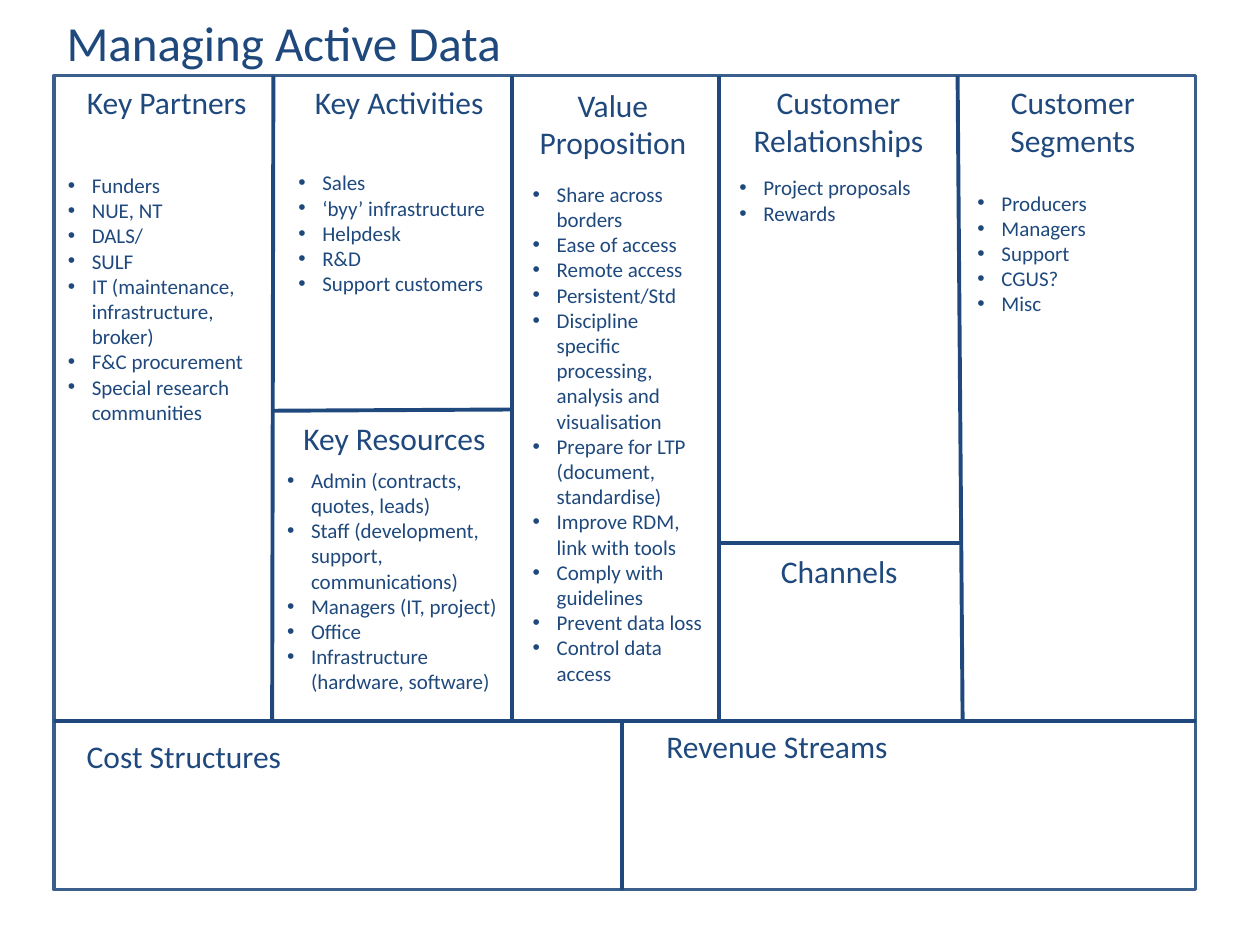
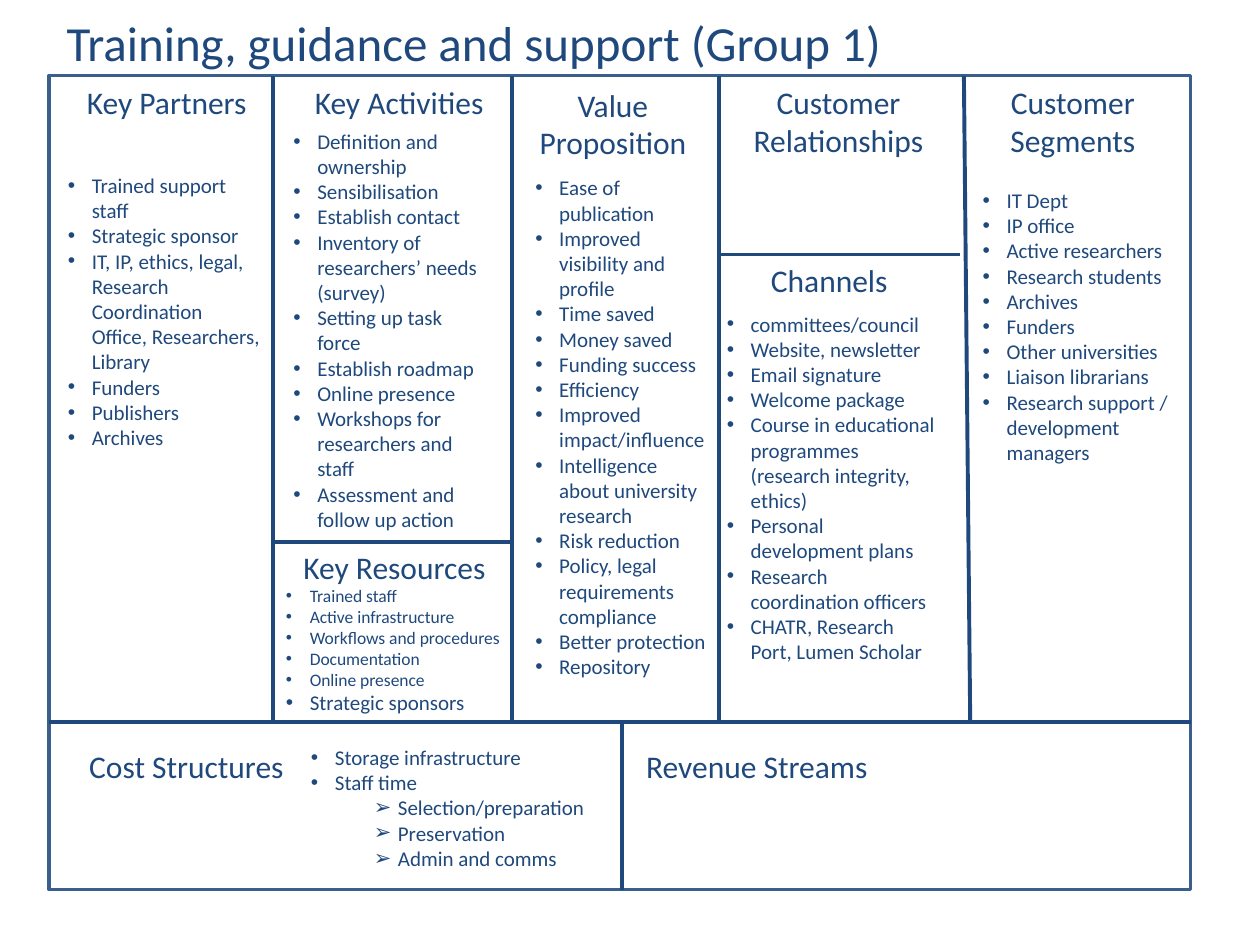
from collections import namedtuple

from lxml import etree
from pptx import Presentation
from pptx import util as u
from pptx.dml.color import RGBColor
from pptx.enum import shapes, text
from pptx.oxml.ns import qn

NAVY = RGBColor(0x1F, 0x49, 0x7D)
STEEL = RGBColor(0x3A, 0x5F, 0x8C)
FONT = "Calibri"

# The slide is a grid of 100 columns by 75 rows; all lengths count its cells.
COLS, ROWS = 100, 75
WIDTH, HEIGHT = u.Inches(10), u.Inches(7.5)

EDGES = (4.3, 21.7, 40.6, 57.1, 76.2)
TOP, FLOOR, BASE = 6, 57.2, 70.6
MIDDLE = 49.4
FRAME_WIDTH = 90.6

Box = namedtuple("Box", "x y w h")
Item = namedtuple("Item", "label level size", defaults=(0, 12))
Head = namedtuple("Head", "label dx dy w wrap", defaults=(False,))
Notes = namedtuple("Notes", "dx dy w items")
Canvas = namedtuple("Canvas", "title left floor tilts splits nudges notes")

HEADS = {
    "partners": Head("Key Partners", 1.6, 0.1, 14.8),
    "activities": Head("Key Activities", 2.3, 0.1, 15.6),
    "resources": Head("Key Resources", 1.4, 0, 16.6),
    "value": Head("Value Proposition", 0.4, 0.3, 15.3, True),
    "relations": Head("Customer Relationships", 0.8, 0.1, 17.3, True),
    "channels": Head("Channels", 3.1, 0, 11.4),
    "segments": Head("Customer Segments", 0.4, 0.1, 17.1, True),
    "costs": Head("Cost Structures", 1.6, 0.8, 17.6),
    "revenue": Head("Revenue Streams", 2.5, 0, 19.8),
}

ACTIVE = Canvas(
    "Managing Active Data", left=4.3, floor=57.2,
    tilts=((21.7, 21.6), (40.6, 40.6), (57.1, 57.1), (76, 76.4)),
    splits={"resources": (21.6, 32.6, 40.5, 32.5),
            "channels": (57.1, 43.1, 76.4, 43.1)},
    nudges={"resources": (0, 0.2), "channels": (0.8, 0.2)},
    notes={
        "partners": Notes(0.1, 7.2, 17.3, [
            "Funders", "NUE, NT", "DALS/", "SULF",
            "IT (maintenance, infrastructure, broker)",
            "F&C procurement", "Special research communities"]),
        "activities": Notes(1, 7, 17.3, [
            "Sales", "‘byy’ infrastructure", "Helpdesk", "R&D",
            "Support customers"]),
        "resources": Notes(0.1, 4, 19.1, [
            "Admin (contracts, quotes, leads)",
            "Staff (development, support, communications)",
            "Managers (IT, project)", "Office",
            "Infrastructure (hardware, software)"]),
        "value": Notes(0.7, 7.9, 15.7, [
            "Share across borders", "Ease of access", "Remote access",
            "Persistent/Std",
            "Discipline specific processing, analysis and visualisation",
            "Prepare for LTP (document, standardise)",
            "Improve RDM, link with tools", "Comply with guidelines",
            "Prevent data loss", "Control data access"]),
        "relations": Notes(0.6, 7.4, 17.3, ["Project proposals", "Rewards"]),
        "segments": Notes(0.4, 8.6, 17.3, [
            "Producers", "Managers", "Support", "CGUS?", "Misc"]),
    })

TRAINING = Canvas(
    "Training, guidance and support (Group 1)", left=3.9, floor=57.3,
    tilts=((21.7, 21.7), (40.6, 40.6), (57.1, 57.1), (76.5, 77)),
    splits={"resources": (21.7, 43, 40.7, 43),
            "channels": (56.9, 20.2, 76.2, 20.2)},
    nudges={"costs": (0.2, 0.8), "revenue": (-1.6, 1.6)},
    notes={
        "partners": Notes(0.1, 7.2, 17.3, [
            "Trained support staff", "Strategic sponsor",
            "IT, IP, ethics, legal, Research Coordination Office, "
            "Researchers, Library",
            "Funders", "Publishers", "Archives"]),
        "activities": Notes(0.6, 3.7, 17.3, [
            "Definition and ownership", "Sensibilisation",
            "Establish contact", "Inventory of researchers’ needs (survey)",
            "Setting up task force", "Establish roadmap", "Online presence",
            "Workshops for researchers and staff",
            "Assessment and follow up action"]),
        "resources": Notes(0, 2.9, 19.9, [
            *(Item(label, size=10) for label in (
                "Trained staff", "Active infrastructure",
                "Workflows and procedures", "Documentation",
                "Online presence")),
            "Strategic sponsors"]),
        "value": Notes(0.9, 7.4, 15.7, [
            "Ease of publication", "Improved visibility and profile",
            "Time saved", "Money saved", "Funding success", "Efficiency",
            "Improved impact/influence",
            "Intelligence about university research", "Risk reduction",
            "Policy, legal requirements compliance", "Better protection",
            "Repository"]),
        "channels": Notes(-0.4, 4, 18.7, [
            "committees/council", "Website, newsletter", "Email signature",
            "Welcome package",
            "Course in educational programmes (research integrity, ethics)",
            "Personal development plans", "Research coordination officers",
            "CHATR, Research Port, Lumen Scholar"]),
        "segments": Notes(0.8, 8.4, 17.3, [
            "IT Dept", "IP office", "Active researchers",
            "Research students", "Archives", "Funders",
            "Other universities", "Liaison librarians",
            "Research support / development managers"]),
        "costs": Notes(19.4, 1.4, 24.6, [
            "Storage infrastructure", "Staff time",
            *(Item(label, level=1) for label in (
                "Selection/preparation", "Preservation",
                "Admin and comms"))]),
    })


def across(cols):
    return round(WIDTH * cols / COLS)


def down(rows):
    return round(HEIGHT * rows / ROWS)


def place(box):
    return across(box.x), down(box.y), across(box.w), down(box.h)


def style(para, size):
    for run in para.runs:
        run.font.name = FONT
        run.font.size = u.Pt(size)
        run.font.color.rgb = NAVY


def add_text(slide, box, wrap):
    frame = slide.shapes.add_textbox(*place(box)).text_frame
    frame.word_wrap = wrap
    frame.auto_size = text.MSO_AUTO_SIZE.SHAPE_TO_FIT_TEXT
    return frame


def add_label(slide, box, label, size, wrap=False):
    """Write one heading; a wrapped one is centred."""
    frame = add_text(slide, box, wrap)
    frame.text = label
    para = frame.paragraphs[0]
    if wrap:
        para.alignment = text.PP_ALIGN.CENTER
    style(para, size)


def add_bullet(para, level):
    props = para._p.get_or_add_pPr()
    props.set("marL", str(u.Inches(0.19 + 0.5 * level)))
    props.set("indent", str(-u.Inches(0.19)))
    etree.SubElement(props, qn("a:buFont")).set("typeface", "Arial")
    etree.SubElement(props, qn("a:buChar")).set("char", "•➢"[level])


def add_list(slide, box, items):
    frame = add_text(slide, box, True)
    for i, item in enumerate(items):
        item = Item(item) if isinstance(item, str) else item
        para = frame.add_paragraph() if i else frame.paragraphs[0]
        para.text = item.label
        para.level = item.level
        add_bullet(para, item.level)
        style(para, item.size)


def add_line(slide, x1, y1, x2, y2):
    line = slide.shapes.add_connector(
        shapes.MSO_CONNECTOR.STRAIGHT,
        across(x1), down(y1), across(x2), down(y2))
    line.line.color.rgb = NAVY
    line.line.width = u.Pt(2.25)
    etree.SubElement(line._element.spPr, qn("a:effectLst"))


def draw_frame(slide, box, canvas):
    """Draw the outer border and the lines that divide it."""
    rect = slide.shapes.add_shape(shapes.MSO_SHAPE.RECTANGLE, *place(box))
    rect.shadow.inherit = False
    rect.fill.background()
    rect.line.color.rgb = STEEL
    rect.line.width = u.Pt(2)
    for high, low in canvas.tilts:
        add_line(slide, high, box.y, low, FLOOR)
    for ends in canvas.splits.values():
        add_line(slide, *ends)
    add_line(slide, box.x, canvas.floor, box.x + box.w, canvas.floor)
    add_line(slide, MIDDLE, FLOOR, MIDDLE, box.y + box.h)


def find_cells(canvas):
    """Give the top left corner of each section."""
    names = ("partners", "activities", "value", "relations", "segments")
    cells = {name: (x, TOP) for name, x in zip(names, EDGES)}
    for name, x in (("resources", EDGES[1]), ("channels", EDGES[3])):
        cells[name] = (x, canvas.splits[name][1])
    cells["costs"] = (EDGES[0], FLOOR)
    cells["revenue"] = (MIDDLE, FLOOR)
    return cells


def fill_cell(slide, corner, head, nudge, notes):
    x, y = corner
    box = Box(x + head.dx + nudge[0], y + head.dy + nudge[1],
              head.w, 7.1 if head.wrap else 4)
    add_label(slide, box, head.label, 18, head.wrap)
    if notes:
        box = Box(x + notes.dx, y + notes.dy, notes.w, 2 * len(notes.items))
        add_list(slide, box, notes.items)


def add_canvas(deck, canvas):
    slide = deck.slides.add_slide(deck.slide_layouts[6])
    frame = Box(canvas.left, TOP, FRAME_WIDTH, BASE - TOP)
    draw_frame(slide, frame, canvas)
    title_width = 1.7 * len(canvas.title) + 2.5
    add_label(slide, Box(4.3, 0.5, title_width, 5.7), canvas.title, 28)
    cells = find_cells(canvas)
    for name, head in HEADS.items():
        fill_cell(slide, cells[name], head,
                  canvas.nudges.get(name, (0, 0)), canvas.notes.get(name))


def main():
    deck = Presentation()
    deck.slide_width, deck.slide_height = WIDTH, HEIGHT
    for canvas in (ACTIVE, TRAINING):
        add_canvas(deck, canvas)
    deck.save("out.pptx")


if __name__ == "__main__":
    main()
